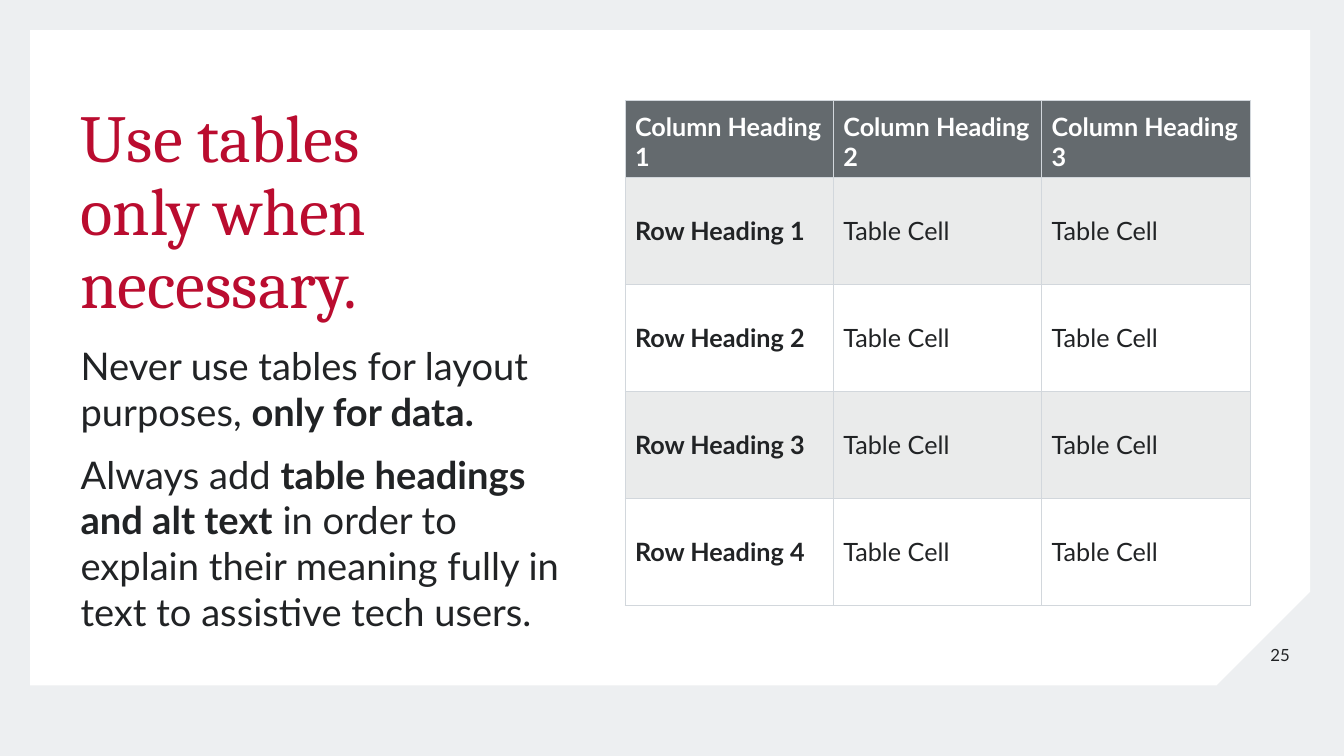
from lxml import etree
from pptx import Presentation
from pptx.dml.color import RGBColor
from pptx.enum.shapes import MSO_SHAPE
from pptx.enum.text import MSO_ANCHOR, MSO_AUTO_SIZE, PP_ALIGN
from pptx.oxml.ns import qn
from pptx.util import Cm, Pt

TOP, MIDDLE, BOTTOM = MSO_ANCHOR.TOP, MSO_ANCHOR.MIDDLE, MSO_ANCHOR.BOTTOM
LEFT, CENTER = PP_ALIGN.LEFT, PP_ALIGN.CENTER
SNIPPED = MSO_SHAPE.SNIP_1_RECTANGLE
NO_FIT = MSO_AUTO_SIZE.NONE

COLORS = {
    "background": "EDEFF1",
    "panel": "FFFFFF",
    "title": "BA0C2F",
    "text": "212325",
    "heading": "646A6E",
    "heading text": "FFFFFF",
    "band": "EAEBEB",
    "border": "D2D7DC",
}


def write(frame, *paragraphs, size, color="text", font="Lato", align=LEFT,
          line=1.0, before=0, after=0):
    """Fill a text frame; ** switches bold on and off, a newline breaks the line."""
    for number, text in enumerate(paragraphs):
        paragraph = frame.add_paragraph() if number else frame.paragraphs[0]
        paragraph.alignment = align
        paragraph.line_spacing = line
        paragraph.space_before = Pt(before if number else 0)
        paragraph.space_after = Pt(after)
        for part, words in enumerate(text.split("**")):
            for row, piece in enumerate(words.split("\n")):
                if row:
                    paragraph.add_line_break()
                if piece:
                    run = paragraph.add_run()
                    run.text = piece
                    run.font.name = font
                    run.font.size = Pt(size)
                    run.font.bold = part % 2 == 1
                    run.font.color.rgb = RGBColor.from_string(COLORS[color])


def place(shape, box, insets, anchor):
    """Set position and size, then insets (left, top, right, bottom), all in cm."""
    shape.left, shape.top, shape.width, shape.height = map(Cm, box)
    frame = shape.text_frame
    frame.margin_left, frame.margin_top, frame.margin_right, frame.margin_bottom = map(Cm, insets)
    frame.vertical_anchor = anchor
    frame.word_wrap = True
    frame.auto_size = NO_FIT
    return frame


presentation = Presentation()
presentation.slide_width, presentation.slide_height = Cm(33.87), Cm(19.05)
slide = presentation.slides.add_slide(presentation.slide_layouts[1])
slide.background.fill.solid()
slide.background.fill.fore_color.rgb = RGBColor.from_string(COLORS["background"])

# White panel with the lower right corner cut, behind everything else
panel = slide.shapes.add_shape(SNIPPED, Cm(0.76), Cm(0.76), Cm(32.26), Cm(16.51))
panel.adjustments[0] = 0.143
panel.shadow.inherit = False
panel.fill.solid()
panel.fill.fore_color.rgb = RGBColor.from_string(COLORS["panel"])
panel.line.fill.background()
panel._element.spPr.find(qn("a:xfrm")).set("flipV", "1")
slide.shapes._spTree.insert(2, panel._element)

# Page number
page_number = slide.shapes.add_textbox(0, 0, 0, 0)
write(place(page_number, (31.5, 15.75, 1.52, 1.52), (0.25,) * 4, MIDDLE),
      "25", size=12, align=CENTER)

# Title
title = place(slide.shapes.title, (0.76, 0.76, 14.99, 7.37), (1.27, 0.76, 1.27, 0), BOTTOM)
write(title, "Use tables \nonly when necessary.",
      size=48, color="title", font="Cambria", line=0.9)

# Advice
advice = place(slide.placeholders[1], (0.76, 8.13, 14.99, 9.14), (1.27, 0.51, 1.27, 0.76), TOP)
write(advice,
      "Never use tables for layout purposes, **only for data.**",
      "Always add **table headings and alt text** in order to explain "
      "their meaning fully in text to assistive tech users.",
      size=27.2, before=4, after=8)
for paragraph in advice.paragraphs:
    properties = paragraph._p.get_or_add_pPr()
    properties.set("marL", "0")
    properties.set("indent", "0")
    etree.SubElement(properties, qn("a:buNone"))

# Sample table
rows = [[f"**Column Heading {number}**" for number in range(1, 4)]]
rows += [[f"**Row Heading {number}**", "Table Cell", "Table Cell"] for number in range(1, 5)]
sample = slide.shapes.add_table(5, 3, Cm(15.75), Cm(2.54), Cm(15.75), Cm(12.72)).table
for column in sample.columns:
    column.width = Cm(5.25)
for row_index, texts in enumerate(rows):
    is_heading = row_index == 0
    sample.rows[row_index].height = Cm(1.92 if is_heading else 2.7)
    fill = "heading" if is_heading else "band" if row_index % 2 else "panel"
    for column_index, text in enumerate(texts):
        cell = sample.cell(row_index, column_index)
        cell.vertical_anchor = BOTTOM if is_heading else MIDDLE
        write(cell.text_frame, text, size=18, color="heading text" if is_heading else "text")
        for side in ("lnL", "lnR", "lnT", "lnB"):
            border = etree.SubElement(cell._tc.get_or_add_tcPr(), qn(f"a:{side}"), w=str(Pt(0.75)))
            stroke = etree.SubElement(border, qn("a:solidFill"))
            etree.SubElement(stroke, qn("a:srgbClr"), val=COLORS["border"])
        cell.fill.solid()
        cell.fill.fore_color.rgb = RGBColor.from_string(COLORS[fill])

presentation.save("out.pptx")
